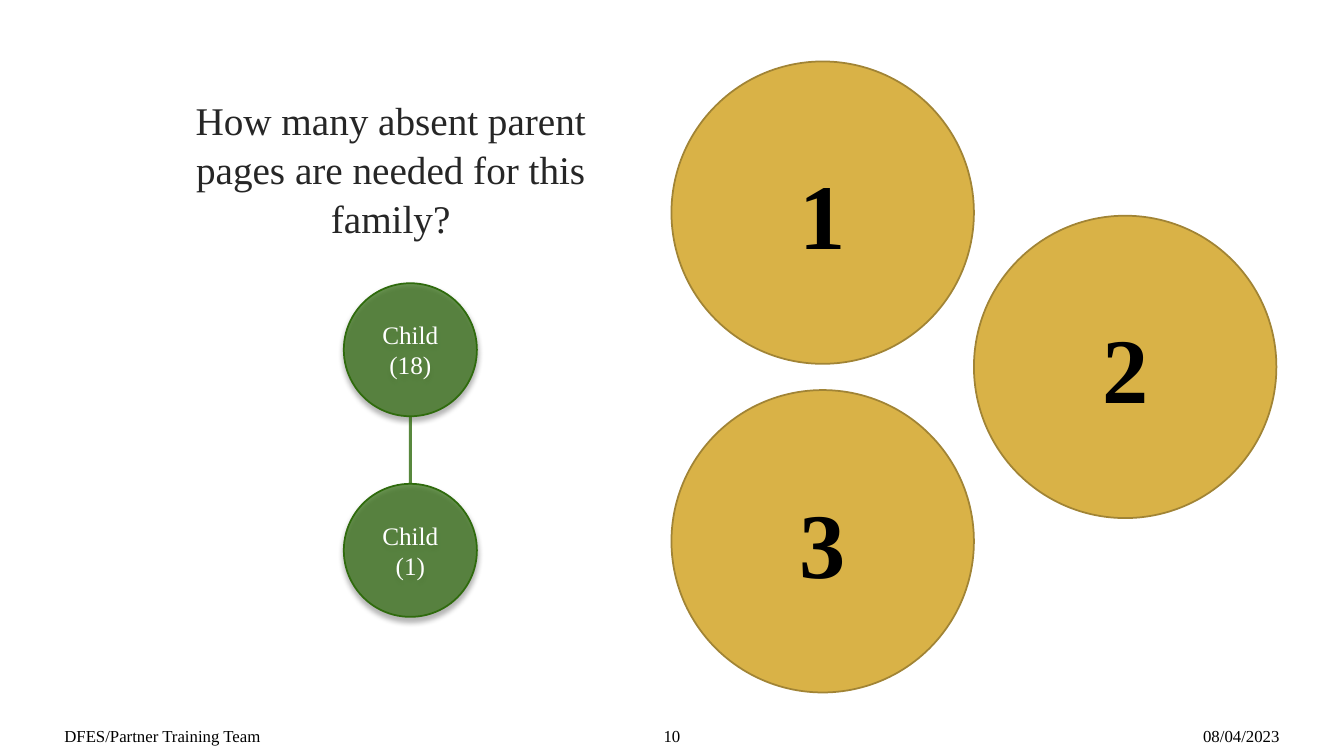
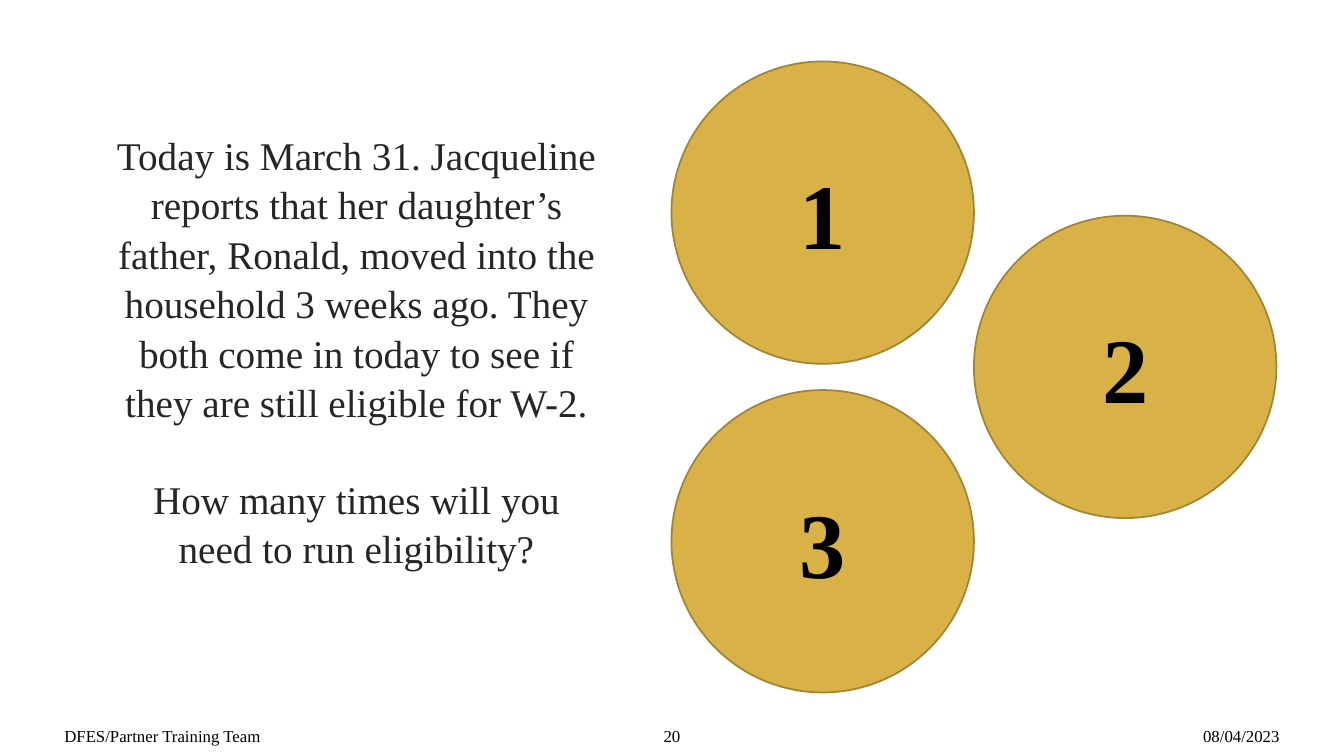
from lxml import etree
from pptx import Presentation
from pptx.dml.color import RGBColor
from pptx.enum import shapes, text
from pptx.oxml.ns import qn
from pptx.util import Inches, Pt

FONT = "Times New Roman"
BLACK, WHITE, INK = "000000", "FFFFFF", "262626"
GOLD, DARK_GOLD, GREEN = "D9B247", "A18435", "2F6B0D"
LEFT, CENTER, RIGHT = text.PP_ALIGN.LEFT, text.PP_ALIGN.CENTER, text.PP_ALIGN.RIGHT
TOP, MIDDLE = text.MSO_ANCHOR.TOP, text.MSO_ANCHOR.MIDDLE

FOOTER_TEAM, FOOTER_DATE = "DFES/Partner Training Team", "08/04/2023"
CHOICES = [("1", 6.66, 0.61), ("2", 9.66, 2.14), ("3", 6.66, 3.87)]
CHOICE_SIZE = 3
CHILD_LEFT, CHILD_TOP, CHILD_SIZE, CHILD_STEP = 3.41, 2.81, 1.32, 1.99

SLIDES = [
    {
        "number": "10",
        "box": (1.38, 0.88, 4.99, 2.4),
        "question": ["How many absent parent pages are needed for this family?"],
        "children": ["Child (18)", "Child (1)"],
    },
    {
        "number": "20",
        "box": (1.04, 1.23, 4.99, 4.33),
        "question": [
            "Today is March 31. Jacqueline reports that her daughter’s father, "
            "Ronald, moved into the household 3 weeks ago. They both come in "
            "today to see if they are still eligible for W-2.",
            "How many times will you need to run eligibility?",
        ],
        "children": [],
    },
]


def rgb(color):
    return RGBColor.from_string(color)


def write(shape, paragraphs, size, color, align=CENTER, anchor=MIDDLE,
          bold=False, spacing=None, gap=0):
    """Fill a shape with paragraphs; gap is the space between them in points."""
    frame = shape.text_frame
    frame.word_wrap = True
    frame.vertical_anchor = anchor
    for index, words in enumerate(paragraphs):
        paragraph = frame.add_paragraph() if index else frame.paragraphs[0]
        paragraph.alignment = align
        if spacing:
            paragraph.line_spacing = spacing
        if index:
            paragraph.space_before = Pt(gap)
        run = paragraph.add_run()
        run.text = words
        run.font.name = FONT
        run.font.size = Pt(size)
        run.font.bold = bold
        run.font.color.rgb = rgb(color)


def add_text(slide, box, paragraphs, size, color, **style):
    shape = slide.shapes.add_textbox(*map(Inches, box))
    write(shape, paragraphs, size, color, **style)


def add_circle(slide, left, top, size, fill, line):
    shape = slide.shapes.add_shape(
        shapes.MSO_SHAPE.OVAL, *map(Inches, (left, top, size, size)))
    shape.shadow.inherit = False
    shape.fill.solid()
    shape.fill.fore_color.rgb = rgb(fill)
    shape.line.color.rgb = rgb(line)
    shape.line.width = Pt(1.25)
    return shape


def set_alpha(color_parent, percent):
    color = color_parent.find(".//" + qn("a:srgbClr"))
    etree.SubElement(color, qn("a:alpha")).set("val", str(percent * 1000))


def add_shadow(shape):
    effects = shape._element.spPr.find(qn("a:effectLst"))
    shadow = etree.SubElement(
        effects, qn("a:outerShdw"), blurRad=str(Pt(4)), dist=str(Pt(3)),
        dir="5400000", rotWithShape="0")
    etree.SubElement(shadow, qn("a:srgbClr"), val=BLACK)
    set_alpha(shadow, 40)


def add_link(slide, upper, lower):
    center = upper.left + upper.width // 2
    link = slide.shapes.add_connector(
        shapes.MSO_CONNECTOR.STRAIGHT, center, upper.top + upper.height,
        center, lower.top)
    link.end_connect(lower, 0)
    link.line.color.rgb = rgb(GREEN)
    link.line.width = Pt(2.25)
    properties = link._element.spPr
    set_alpha(properties.find(qn("a:ln")), 80)
    etree.SubElement(properties, qn("a:effectLst"))


def add_family(slide, children):
    previous = None
    for index, label in enumerate(children):
        child = add_circle(slide, CHILD_LEFT, CHILD_TOP + index * CHILD_STEP,
                           CHILD_SIZE, GREEN, GREEN)
        set_alpha(child._element.spPr.find(qn("a:solidFill")), 70)
        add_shadow(child)
        write(child, [label], 18, WHITE)
        if previous is not None:
            add_link(slide, previous, child)
        previous = child


def add_choices(slide):
    for label, left, top in CHOICES:
        circle = add_circle(slide, left, top, CHOICE_SIZE, GOLD, DARK_GOLD)
        write(circle, [label], 66, BLACK, bold=True)


def add_footer(slide, number):
    for words, left, width, align in [
        (FOOTER_DATE, 11.04, 1.75, RIGHT),
        (FOOTER_TEAM, 0.54, 2.87, LEFT),
        (number, 6.37, 0.59, CENTER),
    ]:
        add_text(slide, (left, 7.14, width, 0.31), [words], 12, BLACK, align=align)


def main():
    presentation = Presentation()
    presentation.slide_width = Inches(13.33)
    presentation.slide_height = Inches(7.5)
    for content in SLIDES:
        slide = presentation.slides.add_slide(presentation.slide_layouts[6])
        add_footer(slide, content["number"])
        add_text(slide, content["box"], content["question"], 28, INK,
                 anchor=TOP, spacing=1.05, gap=34)
        add_family(slide, content["children"])
        add_choices(slide)
    presentation.save("out.pptx")


if __name__ == "__main__":
    main()
